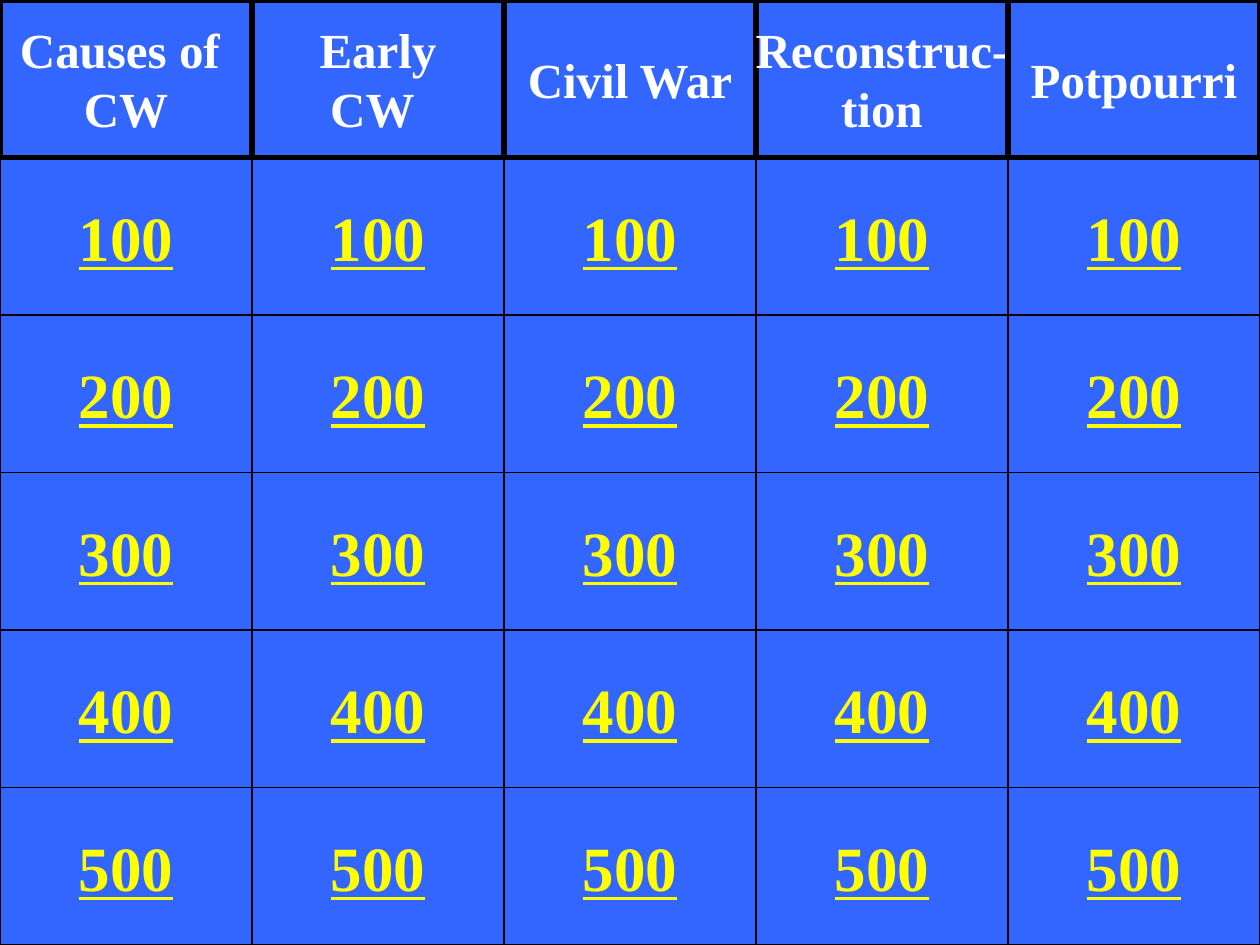
from pptx import Presentation
from pptx.dml.color import RGBColor
from pptx.enum.shapes import MSO_SHAPE
from pptx.enum.text import MSO_ANCHOR, PP_ALIGN
from pptx.util import Pt


def color(hex_value):
    return RGBColor.from_string(hex_value)


def add_cell(column, row, lines, kind, border, font_format, font_color):
    cell = slide.shapes.add_shape(
        kind, Pt(column * cell_width), Pt(row * cell_height),
        Pt(cell_width), Pt(cell_height))
    cell.shadow.inherit = False
    cell.fill.solid()
    cell.fill.fore_color.rgb = color(board_blue)
    cell.line.color.rgb = color("000000")
    cell.line.width = Pt(border)
    frame = cell.text_frame
    frame.word_wrap = False
    frame.vertical_anchor = MSO_ANCHOR.MIDDLE
    for index, line in enumerate(lines):
        paragraph = frame.add_paragraph() if index else frame.paragraphs[0]
        paragraph.alignment = PP_ALIGN.CENTER
        run = paragraph.add_run()
        run.text = line
        for attribute, value in font_format.items():
            setattr(run.font, attribute, value)
        run.font.color.rgb = color(font_color)


board_blue = "3366FF"
cell_width, cell_height = 144, 90
categories = [["Causes of ", "CW"], ["Early", "CW "], ["Civil War"],
              ["Reconstruc-", "tion"], ["Potpourri"]]
points = [100, 200, 300, 400, 500]
category_format = {"name": "Times New Roman", "size": Pt(28), "bold": True}
points_format = {"name": "Times New Roman", "size": Pt(36), "bold": True,
                 "underline": True}

# Slide and background
deck = Presentation()
deck.slide_width, deck.slide_height = Pt(720), Pt(540)
slide = deck.slides.add_slide(deck.slide_layouts[6])
slide.background.fill.solid()
slide.background.fill.fore_color.rgb = color(board_blue)

# Point buttons, column by column
for column in range(len(categories)):
    for row, value in enumerate(points, start=1):
        add_cell(column, row, [str(value)], MSO_SHAPE.ACTION_BUTTON_CUSTOM,
                 0.75, points_format, "FFFF00")

# Category headings, on top of the buttons
for column, lines in enumerate(categories):
    add_cell(column, 0, lines, MSO_SHAPE.RECTANGLE, 3, category_format, "FFFFFF")

deck.save("out.pptx")
